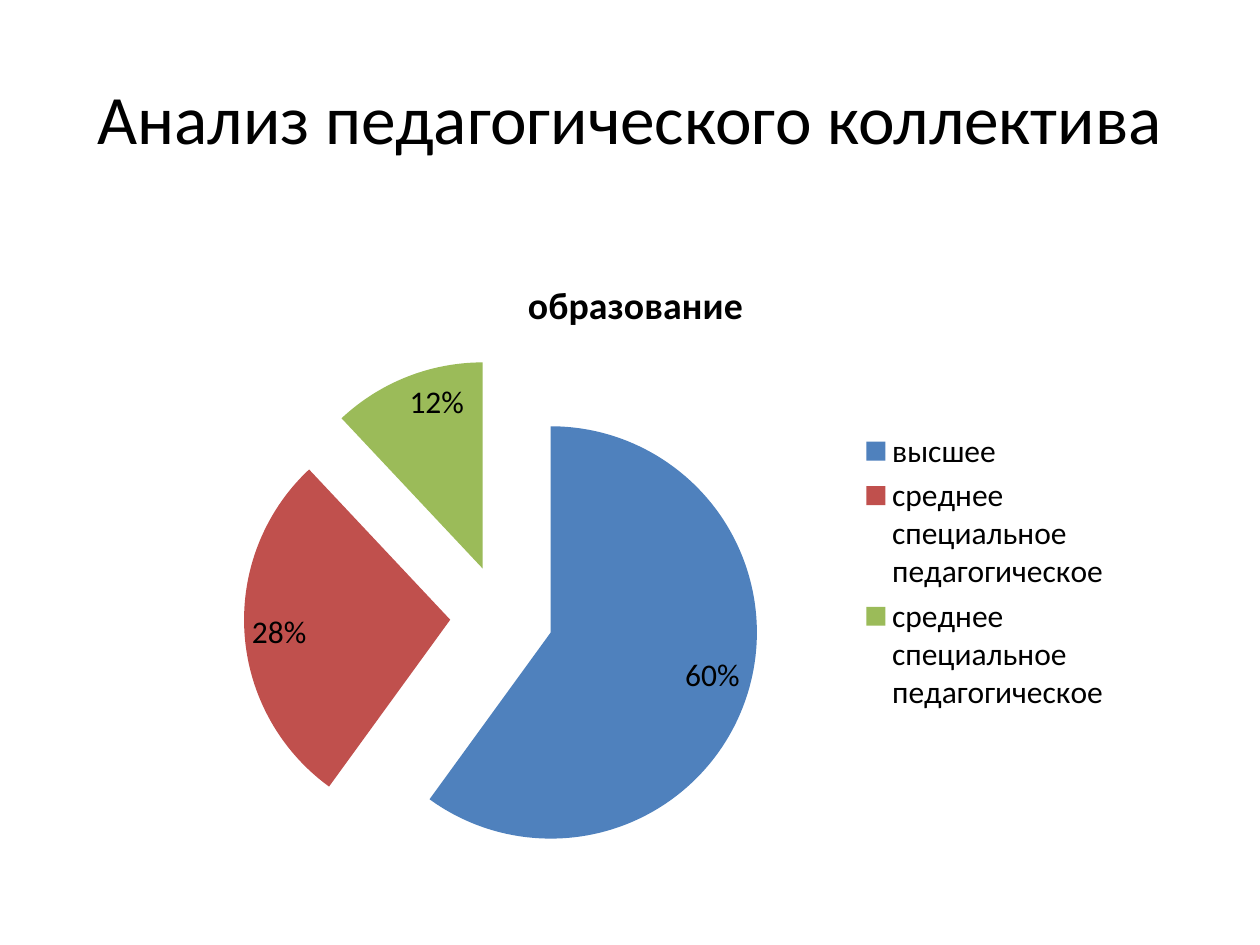
import pptx
import pptx.chart.data
import pptx.dml.color
import pptx.enum.chart
import pptx.enum.text
import pptx.oxml
import pptx.oxml.ns
import pptx.util
from dataclasses import dataclass


@dataclass(frozen=True)
class Theme:
    font: str = "Calibri"
    text: str = "000000"
    background: str = "FFFFFF"
    slices: tuple = ("4F81BD", "C0504D", "9BBB59")
    title_size: float = 39.6
    chart_title_size: float = 21.6
    chart_size: float = 18


def rgb(value):
    return pptx.dml.color.RGBColor.from_string(value)


class SlideBuilder:
    """Holds the style and the current slide; lengths are shares of its size."""

    def __init__(self, prs, theme):
        self.prs, self.theme = prs, theme
        self.slide = prs.slides.add_slide(prs.slide_layouts[5])
        fill = self.slide.background.fill
        fill.solid()
        fill.fore_color.rgb = rgb(theme.background)

    def box(self, left, top, width, height):
        w, h = self.prs.slide_width, self.prs.slide_height
        return int(left * w), int(top * h), int(width * w), int(height * h)

    def style(self, font, size, bold=False):
        font.name = self.theme.font
        font.size = pptx.util.Pt(size)
        font.bold = bold
        font.color.rgb = rgb(self.theme.text)

    def title(self, text, area):
        sp = self.slide.shapes.title
        sp.left, sp.top, sp.width, sp.height = self.box(*area)
        tf = sp.text_frame
        tf.word_wrap = True
        tf.vertical_anchor = pptx.enum.text.MSO_ANCHOR.MIDDLE
        p = tf.paragraphs[0]
        p.alignment = pptx.enum.text.PP_ALIGN.CENTER
        r = p.add_run()
        r.text = text
        self.style(r.font, self.theme.title_size)

    def pie(self, name, rows, area, explosion):
        data = pptx.chart.data.CategoryChartData(number_format="0%")
        data.categories = [label for label, _ in rows]
        data.add_series(name, [value for _, value in rows])
        chart = self.slide.shapes.add_chart(
            pptx.enum.chart.XL_CHART_TYPE.PIE, *self.box(*area), data).chart
        self.style(chart.font, self.theme.chart_size)

        # Chart title and legend
        chart.has_title = True
        r = chart.chart_title.text_frame.paragraphs[0].add_run()
        r.text = name
        self.style(r.font, self.theme.chart_title_size, bold=True)
        chart.has_legend = True
        chart.legend.position = pptx.enum.chart.XL_LEGEND_POSITION.RIGHT
        chart.legend.include_in_layout = False

        # Slices, pulled apart by a share of the radius
        plot = chart.plots[0]
        plot.vary_by_categories = True
        series = plot.series[0]
        for i, color in enumerate(self.theme.slices):
            fill = series.points[i].format.fill
            fill.solid()
            fill.fore_color.rgb = rgb(color)
        tx = series._element.find(pptx.oxml.ns.qn("c:tx"))
        tx.addnext(pptx.oxml.parse_xml(
            f'<c:explosion {pptx.oxml.ns.nsdecls("c")} val="{explosion}"/>'))

        # Value labels
        labels = series.data_labels
        labels.show_value = True
        labels.number_format = "0%"
        labels.number_format_is_linked = False
        labels.position = pptx.enum.chart.XL_LABEL_POSITION.INSIDE_END
        self.style(labels.font, self.theme.chart_size)


def main():
    prs = pptx.Presentation()
    prs.slide_width = pptx.util.Inches(10)
    prs.slide_height = pptx.util.Inches(7.5)
    s = SlideBuilder(prs, Theme())
    s.title("Анализ педагогического коллектива", (0.05, 0.04, 0.9, 1 / 6))
    s.pie("образование",
          [("высшее", 0.6),
           ("среднее специальное педагогическое", 0.28),
           ("среднее специальное педагогическое", 0.12)],
          (0.117, 4 / 15, 0.775, 0.677), explosion=25)
    prs.save("out.pptx")


if __name__ == "__main__":
    main()
